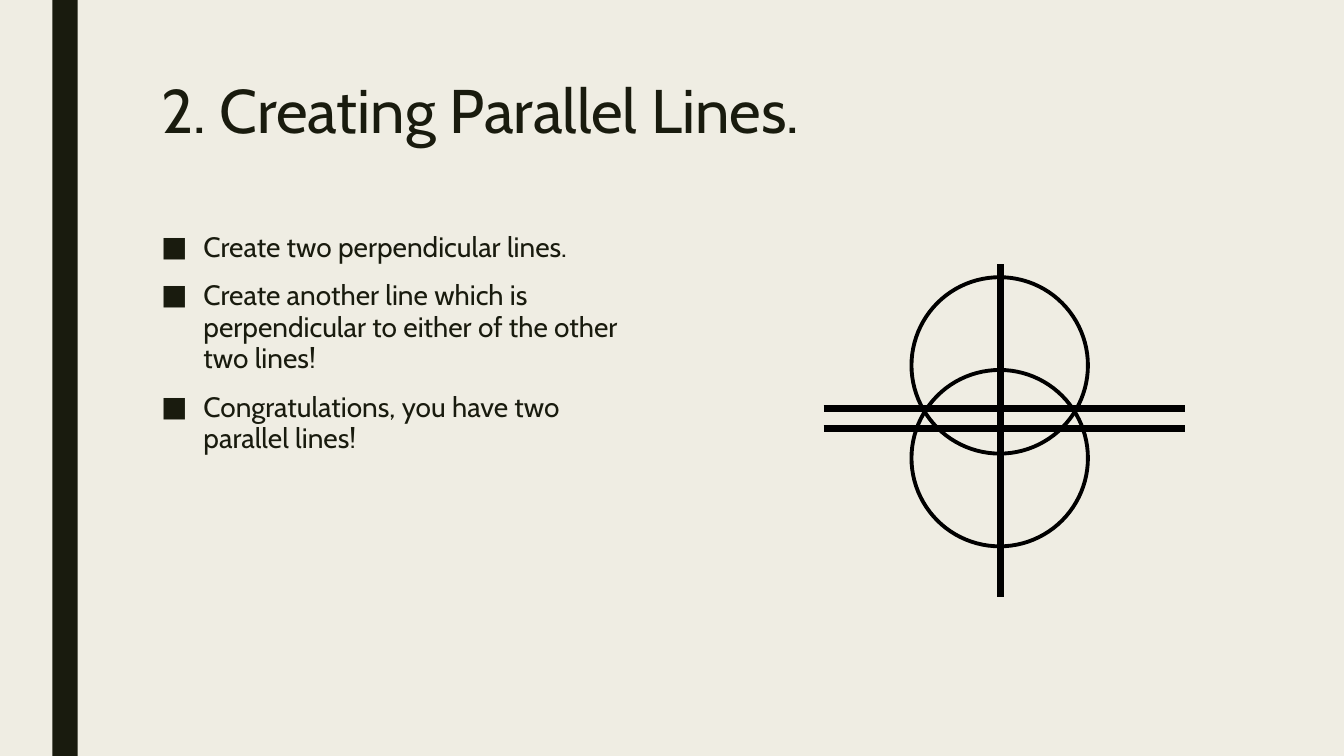
import pptx
import pptx.util
import pptx.dml.color
import pptx.enum.shapes
import pptx.enum.text
import pptx.oxml.ns
import lxml.etree

Inches = pptx.util.Inches
Pt = pptx.util.Pt
Shape = pptx.enum.shapes.MSO_SHAPE
RGBColor = pptx.dml.color.RGBColor

PAPER = RGBColor(0xEF, 0xED, 0xE3)
DARK = RGBColor(0x19, 0x1B, 0x0E)
BLACK = RGBColor(0, 0, 0)

STEPS = [
    "Create two perpendicular lines.",
    "Create another line which is perpendicular to either of the other two lines!",
    "Congratulations, you have two parallel lines!",
]


def write(para, text, size=20, color=DARK, font="Cabin", lead=1.0,
          before=0, after=0, bullet=None, indent=0.42):
    run = para.add_run()
    run.text = text
    run.font.size = Pt(size)
    run.font.name = font
    run.font.color.rgb = color
    para.line_spacing = lead
    para.space_before = Pt(before)
    para.space_after = Pt(after)
    if bullet:
        props = para._p.get_or_add_pPr()
        props.set("marL", str(Inches(indent)))
        props.set("indent", str(-Inches(indent)))
        face = lxml.etree.SubElement(props, pptx.oxml.ns.qn("a:buFont"))
        face.set("typeface", font)
        mark = lxml.etree.SubElement(props, pptx.oxml.ns.qn("a:buChar"))
        mark.set("char", bullet)


class Board:
    def __init__(self, slide, ink=BLACK):
        self.slide = slide
        self.ink = ink
        slide.background.fill.solid()
        slide.background.fill.fore_color.rgb = PAPER

    def text(self, box, lines, **style):
        frame = self.slide.shapes.add_textbox(*map(Inches, box)).text_frame
        frame.word_wrap = True
        frame.vertical_anchor = pptx.enum.text.MSO_ANCHOR.TOP
        for i, line in enumerate(lines):
            para = frame.add_paragraph() if i else frame.paragraphs[0]
            write(para, line, **style)

    def bar(self, box, color):
        bar = self.slide.shapes.add_shape(Shape.RECTANGLE, *map(Inches, box))
        bar.shadow.inherit = False
        bar.fill.solid()
        bar.fill.fore_color.rgb = color
        bar.line.fill.background()

    def ring(self, left, top, size, width=2.75):
        ring = self.slide.shapes.add_shape(
            Shape.OVAL, Inches(left), Inches(top), Inches(size), Inches(size))
        ring.shadow.inherit = False
        ring.fill.background()
        ring.line.color.rgb = self.ink
        ring.line.width = Pt(width)

    def line(self, ends, width=5):
        line = self.slide.shapes.add_connector(
            pptx.enum.shapes.MSO_CONNECTOR.STRAIGHT, *map(Inches, ends))
        line.line.color.rgb = self.ink
        line.line.width = Pt(width)
        lxml.etree.SubElement(
            line._element.spPr, pptx.oxml.ns.qn("a:effectLst"))


def main():
    deck = pptx.Presentation()
    deck.slide_width = Inches(13.33)
    deck.slide_height = Inches(7.5)
    board = Board(deck.slides.add_slide(deck.slide_layouts[6]))

    board.bar((0.52, 0, 0.25, 7.5), DARK)
    board.text((1.5, 0.75, 10.5, 1.62), ["2. Creating Parallel Lines."],
               size=44, lead=0.89)
    board.text((1.5, 2.25, 4.83, 3.92), STEPS,
               lead=0.94, before=10, after=2, bullet="■")

    board.line((9.92, 2.62, 9.92, 5.92))
    for top in (2.75, 3.67):
        board.ring(9.04, top, 1.75)
    for y in (4.25, 4.05):
        board.line((8.17, y, 11.75, y))

    deck.save("out.pptx")


if __name__ == "__main__":
    main()
